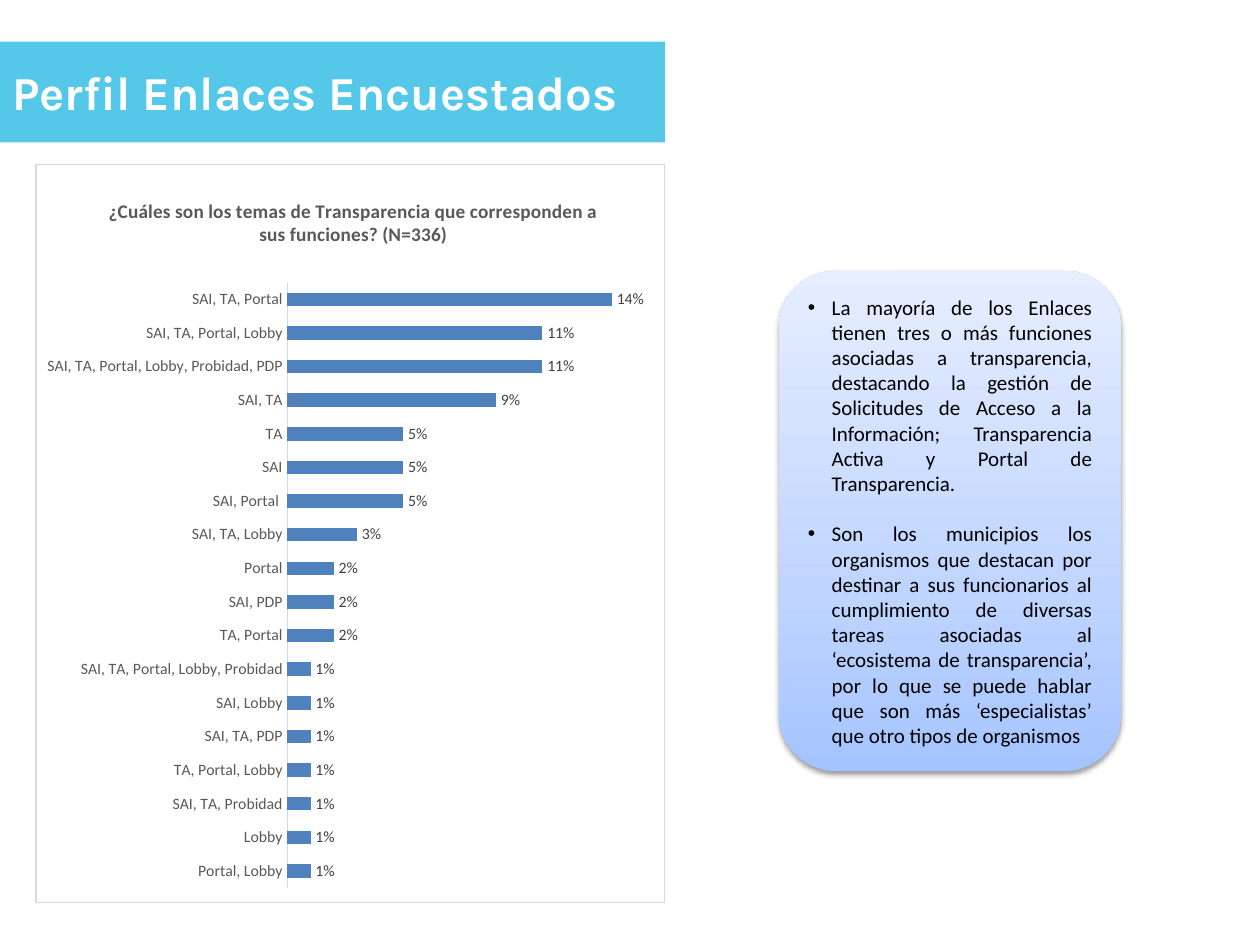
from dataclasses import dataclass
from typing import NamedTuple

from pptx import Presentation
from pptx import util as u
from pptx.chart import data as cd
from pptx.dml import color as col
from pptx.enum import chart as ch
from pptx.enum import shapes as sh
from pptx.enum import text as tx
from pptx.oxml import ns, parse_xml


@dataclass(frozen=True)
class Theme:
    font: str = "Calibri"
    head: str = "Karla"
    band: str = "55C8E9"
    bar: str = "4F81BD"
    rule: str = "D9D9D9"
    grey: str = "595959"
    label: str = "404040"
    white: str = "FFFFFF"
    black: str = "000000"
    fade: tuple = ((0, "A4C4FF"), (35, "BFD4FF"), (100, "E6EEFF"))
    big: float = 27
    body: float = 12
    title: float = 11
    small: float = 9


class Box(NamedTuple):
    left: float
    top: float
    width: float
    height: float

    def emu(self) -> list:
        return [u.Inches(n) for n in self]


class Row(NamedTuple):
    name: str
    share: int


THEME = Theme()
TITLE = "¿Cuáles son los temas de Transparencia que corresponden a sus funciones? (N=336)"
ROWS = [
    Row("SAI, TA, Portal", 14),
    Row("SAI, TA, Portal, Lobby", 11),
    Row("SAI, TA, Portal, Lobby, Probidad, PDP", 11),
    Row("SAI, TA", 9),
    Row("TA", 5),
    Row("SAI", 5),
    Row("SAI, Portal ", 5),
    Row("SAI, TA, Lobby", 3),
    Row("Portal", 2),
    Row("SAI, PDP", 2),
    Row("TA, Portal", 2),
    Row("SAI, TA, Portal, Lobby, Probidad", 1),
    Row("SAI, Lobby", 1),
    Row("SAI, TA, PDP", 1),
    Row("TA, Portal, Lobby", 1),
    Row("SAI, TA, Probidad", 1),
    Row("Lobby", 1),
    Row("Portal, Lobby", 1),
]
NOTES = [
    "La mayoría de los Enlaces tienen tres o más funciones asociadas a transparencia, "
    "destacando la gestión de Solicitudes de Acceso a la Información; Transparencia "
    "Activa y Portal de Transparencia.",
    "Son los municipios los organismos que destacan por destinar a sus funcionarios al "
    "cumplimiento de diversas tareas asociadas al ‘ecosistema de transparencia’, por lo "
    "que se puede hablar que son más ‘especialistas’ que otro tipos de organismos",
]


def rgb(code: str) -> col.RGBColor:
    return col.RGBColor.from_string(code)


def style(font, size: float, code: str, face: str = THEME.font, bold: bool = False) -> None:
    font.name = face
    font.size = u.Pt(size)
    font.bold = bold
    font.color.rgb = rgb(code)


def node(xml: str):
    head, tail = xml.split(">", 1)
    slash = "/" if head.endswith("/") else ""
    return parse_xml(f"{head.rstrip('/')} {ns.nsdecls('a', 'c')}{slash}>{tail}")


def panel(slide, kind, box: Box):
    shape = slide.shapes.add_shape(kind, *box.emu())
    shape.shadow.inherit = False
    shape.line.fill.background()
    shape.text_frame.word_wrap = True
    shape.text_frame.vertical_anchor = tx.MSO_ANCHOR.MIDDLE
    return shape


def banner(slide, box: Box, words: str) -> None:
    shape = panel(slide, sh.MSO_SHAPE.RECTANGLE, box)
    shape.fill.solid()
    shape.fill.fore_color.rgb = rgb(THEME.band)
    para = shape.text_frame.paragraphs[0]
    para.alignment = tx.PP_ALIGN.LEFT
    run = para.add_run()
    run.text = words
    style(run.font, THEME.big, THEME.white, THEME.head, True)


def bullet(para, words: str) -> None:
    para.alignment = tx.PP_ALIGN.JUSTIFY
    props = para._p.get_or_add_pPr()
    props.set("marL", str(u.Inches(0.19)))
    props.set("indent", str(-u.Inches(0.19)))
    props.append(node('<a:buFont typeface="Arial"/>'))
    props.append(node('<a:buChar char="•"/>'))
    run = para.add_run()
    run.text = words
    style(run.font, THEME.body, THEME.black)


def card(slide, box: Box, notes: list[str]) -> None:
    shape = panel(slide, sh.MSO_SHAPE.ROUNDED_RECTANGLE, box)
    shape.fill.gradient()
    shape.fill.gradient_angle = 90
    props = shape._element.spPr
    stops = props.find(".//" + ns.qn("a:gsLst"))
    stops[:] = [
        node(f'<a:gs pos="{pos * 1000}"><a:srgbClr val="{code}"/></a:gs>')
        for pos, code in THEME.fade
    ]
    props.find(ns.qn("a:effectLst")).append(node(
        f'<a:outerShdw blurRad="{u.Pt(3.1)}" dist="{u.Pt(1.6)}" dir="5400000" rotWithShape="0">'
        f'<a:srgbClr val="{THEME.black}"><a:alpha val="38000"/></a:srgbClr></a:outerShdw>'
    ))
    frame = shape.text_frame
    for num, words in enumerate(notes):
        para = frame.add_paragraph() if num else frame.paragraphs[0]
        para.space_before = u.Pt(14.4 if num else 0)
        bullet(para, words)


def layout(x: float, y: float, size: tuple = ()):
    inner = '<c:layoutTarget val="inner"/>' if size else ""
    spans = "".join(f'<c:{key} val="{val}"/>' for key, val in zip("wh", size))
    return node(
        f'<c:layout><c:manualLayout>{inner}<c:xMode val="edge"/><c:yMode val="edge"/>'
        f'<c:x val="{x}"/><c:y val="{y}"/>{spans}</c:manualLayout></c:layout>'
    )


def place(part, spot) -> None:
    for old in part.findall(ns.qn("c:layout")):
        part.remove(old)
    words = part.find(ns.qn("c:tx"))
    if words is None:
        part.insert(0, spot)
    else:
        words.addnext(spot)


def graph(slide, box: Box, rows: list[Row]) -> None:
    data = cd.CategoryChartData(number_format="0")
    data.categories = [row.name for row in rows]
    data.add_series("Series 1", [row.share for row in rows])
    chart = slide.shapes.add_chart(ch.XL_CHART_TYPE.BAR_CLUSTERED, *box.emu(), data).chart
    style(chart.font, 10, THEME.black)
    chart.has_legend = False
    chart.has_title = True
    run = chart.chart_title.text_frame.paragraphs[0].add_run()
    run.text = TITLE
    style(run.font, THEME.title, THEME.grey, bold=True)

    cats = chart.category_axis
    cats.reverse_order = True
    cats.major_tick_mark = ch.XL_TICK_MARK.NONE
    cats.format.line.color.rgb = rgb(THEME.rule)
    cats.format.line.width = u.Pt(0.75)
    style(cats.tick_labels.font, THEME.small, THEME.grey)
    vals = chart.value_axis
    vals.minimum_scale, vals.maximum_scale = 0, 16
    vals.has_major_gridlines = False
    vals.visible = False

    plot = chart.plots[0]
    plot.gap_width, plot.overlap = 150, -25
    plot.vary_by_categories = False
    fill = plot.series[0].format.fill
    fill.solid()
    fill.fore_color.rgb = rgb(THEME.bar)
    plot.has_data_labels = True
    tags = plot.data_labels
    tags.show_value = True
    tags.number_format, tags.number_format_is_linked = '0"%"', False
    tags.position = ch.XL_LABEL_POSITION.OUTSIDE_END
    style(tags.font, THEME.small, THEME.label)

    body = chart.element.find(ns.qn("c:chart"))
    place(body.find(ns.qn("c:title")), layout(0.11, 0.04))
    place(body.find(ns.qn("c:plotArea")), layout(0.4, 0.16, (0.59, 0.82)))
    body.addnext(node(
        f'<c:spPr><a:noFill/><a:ln w="{u.Pt(0.75)}"><a:solidFill>'
        f'<a:srgbClr val="{THEME.rule}"/></a:solidFill></a:ln></c:spPr>'
    ))


def main() -> None:
    deck = Presentation()
    deck.slide_width, deck.slide_height = u.Inches(10), u.Inches(7.5)
    slide = deck.slides.add_slide(deck.slide_layouts[6])
    graph(slide, Box(0.28, 1.3, 5, 5.87), ROWS)
    banner(slide, Box(0, 0.33, 5.28, 0.8), "Perfil Enlaces Encuestados")
    card(slide, Box(6.18, 2.15, 2.72, 3.97), NOTES)
    deck.save("out.pptx")


if __name__ == "__main__":
    main()
